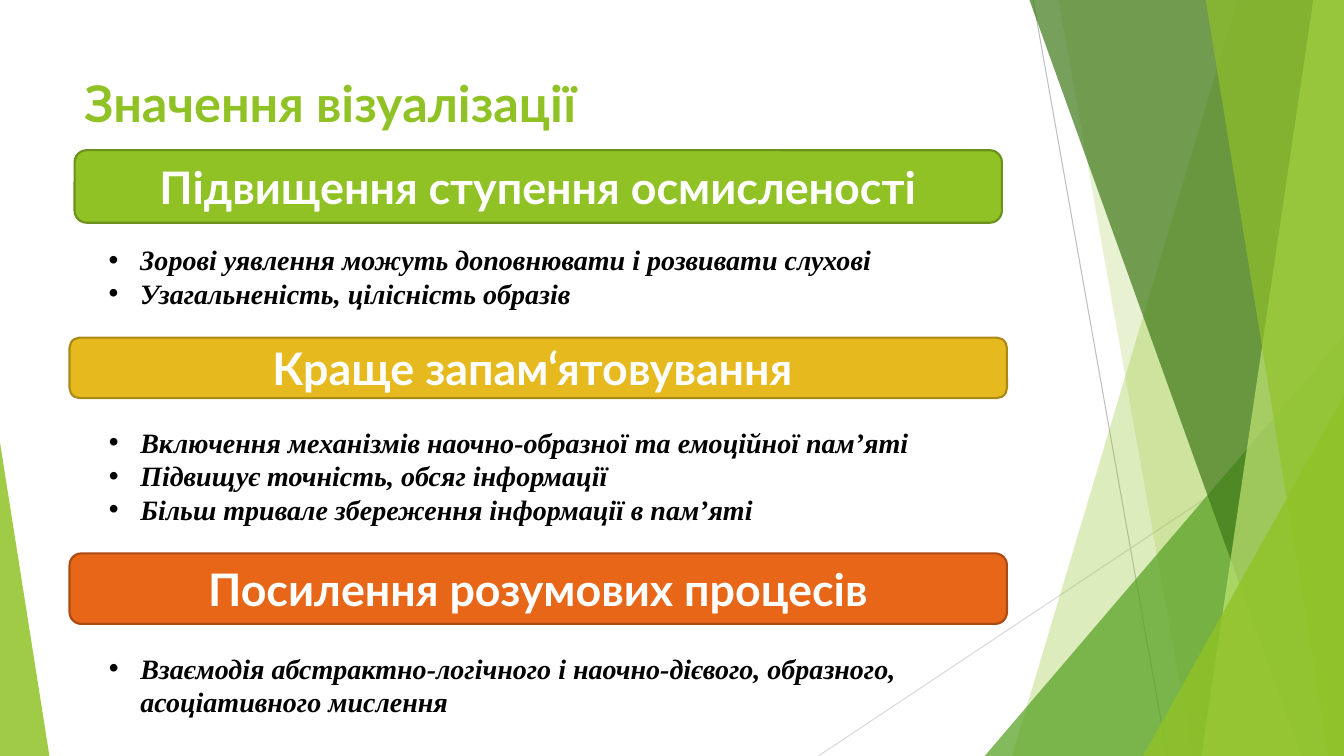
from pptx import Presentation
from pptx.dml.color import RGBColor
from pptx.enum.shapes import MSO_CONNECTOR, MSO_SHAPE
from pptx.enum.text import MSO_ANCHOR, PP_ALIGN
from pptx.oxml.ns import qn
from pptx.util import Pt
from lxml import etree

STRAIGHT = MSO_CONNECTOR.STRAIGHT
TRIANGLE = MSO_SHAPE.ISOSCELES_TRIANGLE
ROUNDED = MSO_SHAPE.ROUNDED_RECTANGLE
TOP, MIDDLE = MSO_ANCHOR.TOP, MSO_ANCHOR.MIDDLE
LEFT, CENTER = PP_ALIGN.LEFT, PP_ALIGN.CENTER

WIDTH, HEIGHT = 960, 540
FACET_TOP = -0.72
BULLET_INDENT = 22.5
COLORS = {
    "green": "90C226", "green_edge": "6B901C",
    "yellow": "E6B91E", "yellow_edge": "AA8916",
    "orange": "E76618", "orange_edge": "AB4B12",
    "leaf": "54A021", "forest": "3F7819", "lime": "C0E474",
    "gray": "BFBFBF", "light_gray": "D9D9D9",
    "white": "FFFFFF", "black": "000000",
}

# Heading, its box, its colour; then bullets and their box
SECTIONS = [
    ("Підвищення ступення осмисленості", (53.3, 107.3, 662.4, 51.8), "green",
     ["Зорові уявлення можуть доповнювати і розвивати слухові",
      "Узагальненість, цілісність образів"], (70.6, 169.9, 645, 55.4)),
    ("Краще запам‘ятовування ", (49.7, 241.2, 669.6, 43.2), "yellow",
     ["Включення механізмів наочно-образної та емоційної пам’яті",
      "Підвищує точність, обсяг інформації",
      "Більш тривале збереження інформації в пам’яті"], (70.6, 300.2, 608.4, 80)),
    ("Посилення розумових процесів", (49.7, 395.3, 669.6, 50.4), "orange",
     ["Взаємодія абстрактно-логічного і наочно-дієвого, образного, "
      "асоціативного мислення"], (70.6, 461.5, 639.4, 55.4)),
]


def rgb(name):
    return RGBColor.from_string(COLORS[name])


def paint(shape, color, opacity=100):
    """Fill a shape without outline or shadow."""
    shape.shadow.inherit = False
    shape.fill.solid()
    shape.fill.fore_color.rgb = rgb(color)
    shape.line.fill.background()
    if opacity < 100:
        color_element = shape.fill._xPr.find(".//" + qn("a:srgbClr"))
        alpha = etree.SubElement(color_element, qn("a:alpha"))
        alpha.set("val", str(opacity * 1000))


def add_line(slide, start, end, color):
    line = slide.shapes.add_connector(STRAIGHT, *map(Pt, start + end))
    line.line.color.rgb = rgb(color)
    line.line.width = Pt(0.75)
    etree.SubElement(line._element.spPr, qn("a:effectLst"))


def add_facet(slide, top_x, bottom_x, color, opacity):
    """Band from a slanted left side to the right slide edge."""
    builder = slide.shapes.build_freeform(Pt(top_x), Pt(FACET_TOP), scale=1.0)
    corners = [(WIDTH, FACET_TOP), (WIDTH, HEIGHT), (bottom_x, HEIGHT)]
    builder.add_line_segments([(Pt(x), Pt(y)) for x, y in corners], close=True)
    paint(builder.convert_to_shape(), color, opacity)


def add_corner(slide, left, top, width, apex, color, opacity):
    """Right triangle standing on the bottom slide edge."""
    shape = slide.shapes.add_shape(
        TRIANGLE, Pt(left), Pt(top), Pt(width), Pt(HEIGHT - top))
    shape.adjustments[0] = apex
    paint(shape, color, opacity)


def add_bullet(paragraph):
    properties = paragraph._p.get_or_add_pPr()
    properties.set("marL", str(Pt(BULLET_INDENT)))
    properties.set("indent", str(-Pt(BULLET_INDENT)))
    etree.SubElement(properties, qn("a:buFont")).set("typeface", "Arial")
    etree.SubElement(properties, qn("a:buChar")).set("char", "•")


def write(shape, lines, size, color, font="Lato", italic=False,
          align=LEFT, anchor=TOP, bullets=False):
    frame = shape.text_frame
    frame.word_wrap = True
    frame.vertical_anchor = anchor
    for index, line in enumerate(lines):
        paragraph = frame.add_paragraph() if index else frame.paragraphs[0]
        paragraph.alignment = align
        if bullets:
            add_bullet(paragraph)
        run = paragraph.add_run()
        run.text = line
        run.font.name = font
        run.font.size = Pt(size)
        run.font.bold = True
        run.font.italic = italic
        run.font.color.rgb = rgb(color)


def add_text(slide, box, lines, **text_format):
    write(slide.shapes.add_textbox(*map(Pt, box)), lines, **text_format)


def add_banner(slide, box, heading, color):
    banner = slide.shapes.add_shape(ROUNDED, *map(Pt, box))
    paint(banner, color)
    banner.line.color.rgb = rgb(color + "_edge")
    banner.line.width = Pt(1.5)
    write(banner, [heading], size=32, color="white", align=CENTER, anchor=MIDDLE)


def add_background(slide):
    add_line(slide, (738, 0), (833.8, HEIGHT), "gray")
    add_line(slide, (WIDTH, 290.2), (584.6, HEIGHT), "light_gray")
    add_facet(slide, 884.2, 722.9, "green", 30)
    add_facet(slide, 756, 851.8, "green", 20)
    add_corner(slide, 703.4, 239.8, 256.6, 1, "leaf", 72)
    add_facet(slide, 735.1, 929.5, "forest", 70)
    add_facet(slide, 938.2, 858.2, "lime", 70)
    add_facet(slide, 861.1, 949, "green", 65)
    add_corner(slide, 816.5, 283, 143.5, 1, "green", 80)
    add_corner(slide, 0, 316.1, 35.3, 0, "green", 85)


def main():
    presentation = Presentation()
    presentation.slide_width, presentation.slide_height = Pt(WIDTH), Pt(HEIGHT)
    slide = presentation.slides.add_slide(presentation.slide_layouts[6])

    add_background(slide)

    # Title
    add_text(slide, (53.3, 48.2, 676.8, 103.7), ["Значення візуалізації"],
             size=36, color="green")

    # Sections
    for heading, banner_box, color, points, points_box in SECTIONS:
        add_banner(slide, banner_box, heading, color)
        add_text(slide, points_box, points, size=20, color="black",
                 font="Times New Roman", italic=True, bullets=True)

    presentation.save("out.pptx")


if __name__ == "__main__":
    main()
